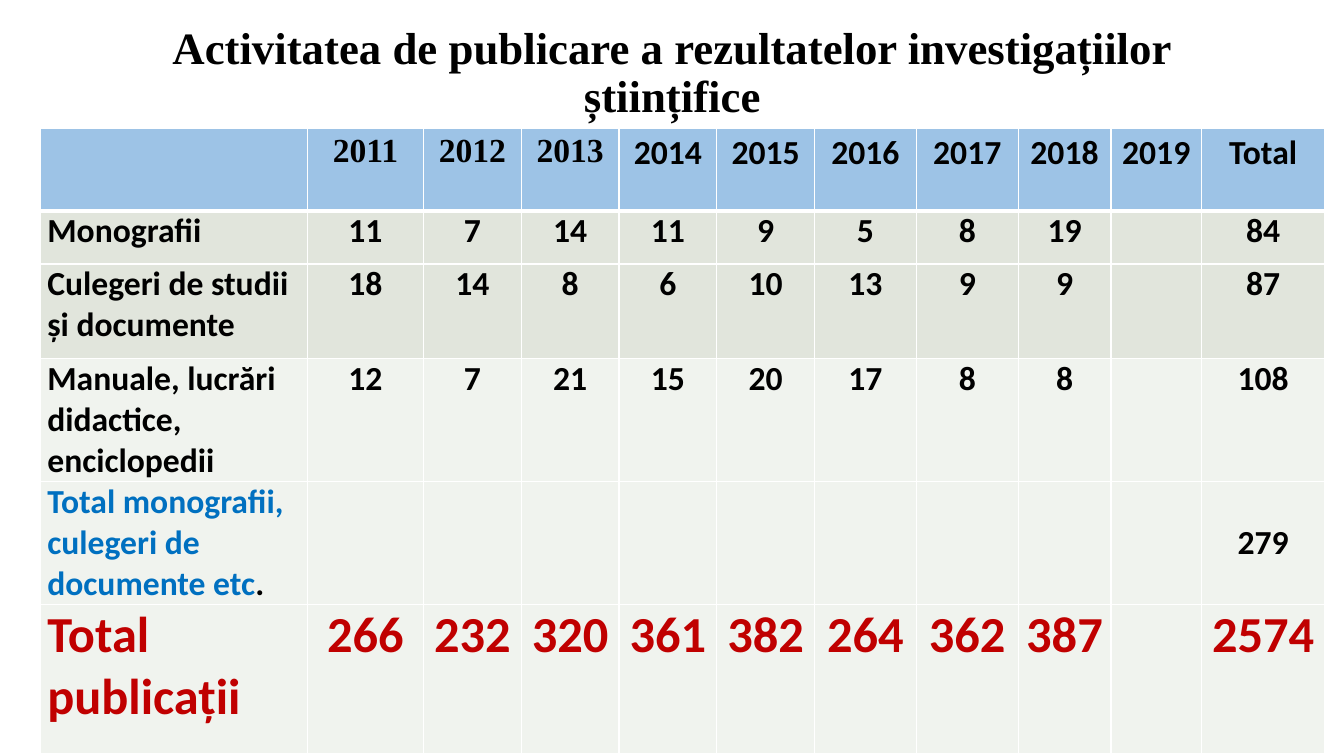
from lxml import etree
from pptx import Presentation
from pptx import util as u
from pptx.dml import color
from pptx.enum import text
from pptx.oxml import ns

SERIF, SANS = "Times New Roman", "Calibri"
BLACK, BLUE, RED, WHITE = "000000", "0070C0", "C00000", "FFFFFF"
HEADER, SAGE, PALE = "9DC3E6", "E1E5DC", "F0F3EE"

COLUMNS = [2.65, 1.15] + [0.97] * 4 + [1.01] * 2 + [0.92, 0.9, 1.22]
ROWS = [0.82, 0.53, 0.94, 1.16, 1.16, 1.48]
LEFT, TOP = 0.4, 1.27

YEARS = [""] + [str(year) for year in range(2011, 2020)] + ["Total"]
PUBLICATIONS = [
    (["Monografii", 11, 7, 14, 11, 9, 5, 8, 19, "", 84], SAGE, {}),
    (["Culegeri de studii și documente", 18, 14, 8, 6, 10, 13, 9, 9, "", 87], SAGE, {}),
    (["Manuale, lucrări didactice, enciclopedii", 12, 7, 21, 15, 20, 17, 8, 8, "", 108], PALE, {}),
    (["Total monografii, culegeri de documente etc"] + [""] * 9 + [279], PALE, {}),
    (["Total publicații", 266, 232, 320, 361, 382, 264, 362, 387, "", 2574], PALE,
     {"size": 36, "ink": RED}),
]


def rgb(code):
    return color.RGBColor.from_string(code)


def write(paragraph, words, size=24, font=SANS, ink=BLACK, align=text.PP_ALIGN.CENTER):
    paragraph.alignment = align
    run = paragraph.add_run()
    run.text = str(words)
    run.font.size = u.Pt(size)
    run.font.name = font
    run.font.bold = True
    run.font.color.rgb = rgb(ink)


def border(cell, top=1, bottom=1):
    properties = cell._tc.get_or_add_tcPr()
    for side, width in zip("LRTB", (1, 1, top, bottom)):
        line = etree.SubElement(properties, ns.qn(f"a:ln{side}"), w=str(u.Pt(width)))
        fill = etree.SubElement(line, ns.qn("a:solidFill"))
        etree.SubElement(fill, ns.qn("a:srgbClr"), val=WHITE)


def paint(cell, fill, **widths):
    border(cell, **widths)
    cell.fill.solid()
    cell.fill.fore_color.rgb = rgb(fill)


def add_title(slide, width, height):
    title = slide.shapes.title
    title.left, title.top = round(width * 0.069), 0
    title.width, title.height = round(width * 0.8625), round(height * 0.196)
    title.text_frame.word_wrap = True
    title.text_frame.vertical_anchor = text.MSO_ANCHOR.MIDDLE
    heading = title.text_frame.paragraphs[0]
    heading.line_spacing = 0.9
    write(heading, "Activitatea de publicare a rezultatelor investigațiilor științifice",
          size=32, font=SERIF)


def fill_header(table):
    for column, label in enumerate(YEARS):
        cell = table.cell(0, column)
        paint(cell, HEADER, bottom=3)
        if label:
            write(cell.text_frame.paragraphs[0], label,
                  font=SERIF if column < 4 else SANS)


def fill_row(table, row, values, fill, style):
    for column, value in enumerate(values):
        cell = table.cell(row, column)
        paint(cell, fill, top=3 if row == 1 else 1)
        cell.margin_left = cell.margin_right = u.Inches(0.07)
        cell.margin_top = cell.margin_bottom = 0
        if value != "":
            align = text.PP_ALIGN.CENTER if column else text.PP_ALIGN.LEFT
            write(cell.text_frame.paragraphs[0], value, **({"align": align} | style))


def add_publications(slide):
    frame = slide.shapes.add_table(
        len(ROWS), len(COLUMNS), u.Inches(LEFT), u.Inches(TOP),
        u.Inches(sum(COLUMNS)), u.Inches(sum(ROWS)))
    table = frame.table
    for column, width in zip(table.columns, COLUMNS):
        column.width = u.Inches(width)
    for row, height in zip(table.rows, ROWS):
        row.height = u.Inches(height)
    fill_header(table)
    for row, (values, fill, style) in enumerate(PUBLICATIONS, 1):
        fill_row(table, row, values, fill, style)
    subtotal = table.cell(4, 0).text_frame.paragraphs[0]
    subtotal.runs[0].font.color.rgb = rgb(BLUE)
    write(subtotal, ".", align=text.PP_ALIGN.LEFT)
    table.cell(4, len(COLUMNS) - 1).vertical_anchor = text.MSO_ANCHOR.MIDDLE


def main():
    deck = Presentation()
    deck.slide_width, deck.slide_height = u.Inches(13.33), u.Inches(7.5)
    slide = deck.slides.add_slide(deck.slide_layouts[5])
    add_title(slide, deck.slide_width, deck.slide_height)
    add_publications(slide)
    deck.save("out.pptx")


if __name__ == "__main__":
    main()
